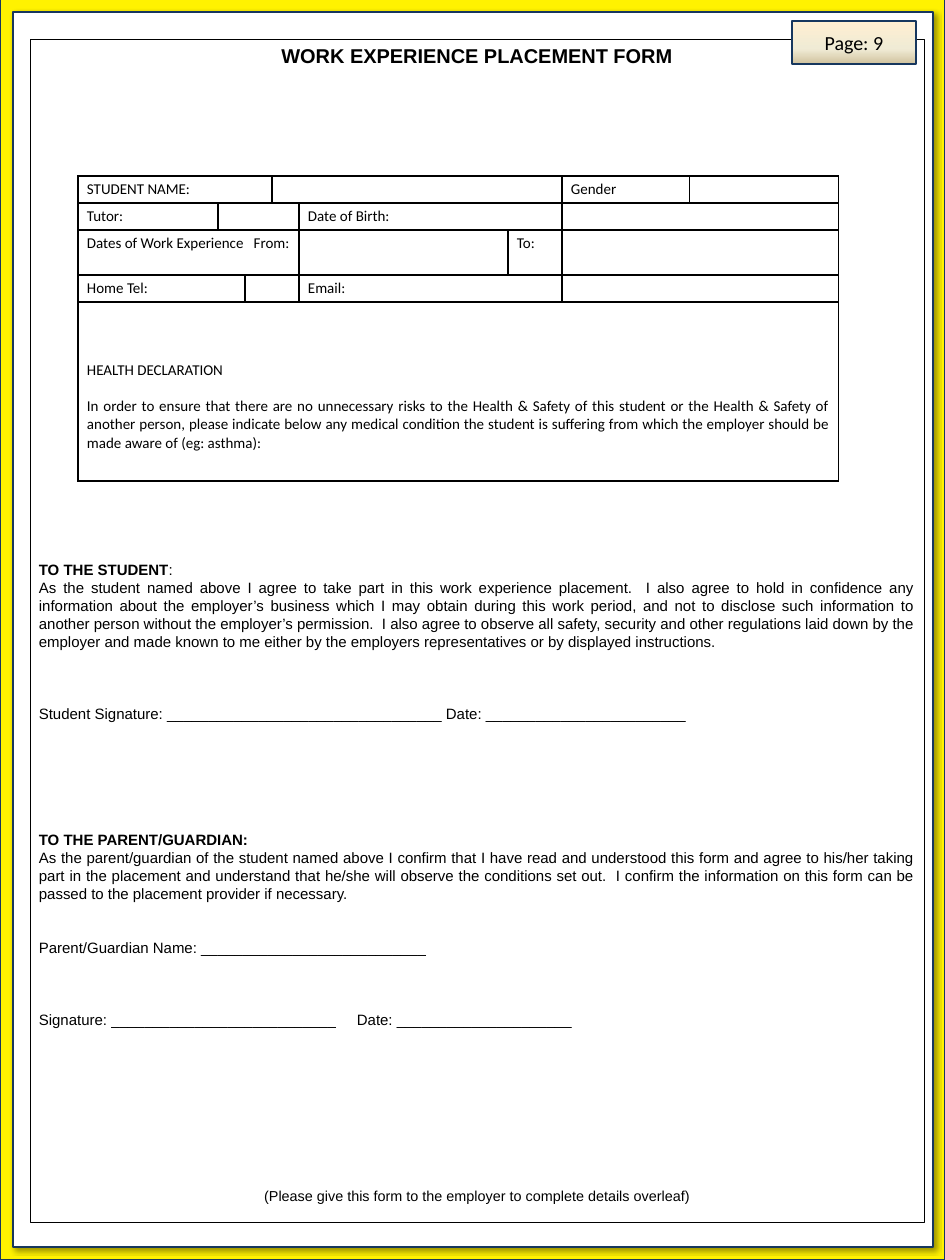
from lxml.etree import SubElement
from pptx import Presentation
from pptx.dml.color import RGBColor
from pptx.enum.shapes import MSO_SHAPE
from pptx.enum.text import MSO_ANCHOR, PP_ALIGN
from pptx.oxml.ns import qn
from pptx.util import Pt

PX = 12700 * 72 // 90
NAVY, BLACK, WHITE, YELLOW = "17375E", "000000", "FFFFFF", "FFF200"
BADGE_STOPS = [(0, "FFEFD1"), (65, "F0EBD5"), (100, "D1C39F")]
LEFT, CENTER, JUSTIFY = PP_ALIGN.LEFT, PP_ALIGN.CENTER, PP_ALIGN.JUSTIFY

COLUMNS = [140, 27, 27, 27, 209, 54, 128, 149]
ROWS = [27, 27, 45, 27, 179]
# Each row lists its cells as (text, columns spanned)
FORM = [
    [("STUDENT NAME:", 3), ("", 3), ("Gender", 1), ("", 1)],
    [("Tutor:", 1), ("", 3), ("Date of Birth:", 2), ("", 2)],
    [("Dates of Work Experience   From:", 4), ("", 1), ("To:", 1), ("", 2)],
    [("Home Tel:", 2), ("", 2), ("Email:", 2), ("", 2)],
    [("", 8)],
]
HEALTH_TITLE = "HEALTH DECLARATION"
HEALTH_TEXT = (
    "In order to ensure that there are no unnecessary risks to the Health & Safety "
    "of this student or the Health & Safety of another person, please indicate below "
    "any medical condition the student is suffering from which the employer should be "
    "made aware of (eg: asthma):"
)
STUDENT_TEXT = (
    "As the student named above I agree to take part in this work experience placement.  "
    "I also agree to hold in confidence any information about the employer’s business "
    "which I may obtain during this work period, and not to disclose such information to "
    "another person without the employer’s permission.  I also agree to observe all safety, "
    "security and other regulations laid down by the employer and made known to me either by "
    "the employers representatives or by displayed instructions."
)
PARENT_TEXT = (
    "As the parent/guardian of the student named above I confirm that I have read and "
    "understood this form and agree to his/her taking part in the placement and understand "
    "that he/she will observe the conditions set out.  I confirm the information on this "
    "form can be passed to the placement provider if necessary."
)
# Gap above in px, alignment, size in points, runs as (text, bold)
LETTER = [
    (0, CENTER, 16, [("WORK EXPERIENCE PLACEMENT FORM", True)]),
    (493, JUSTIFY, 12, [("TO THE STUDENT", True), (":", False)]),
    (0, JUSTIFY, 12, [(STUDENT_TEXT, False)]),
    (54, LEFT, 12, [("Student Signature: " + "_" * 33 + " Date: " + "_" * 24, False)]),
    (108, JUSTIFY, 12, [("TO THE PARENT/GUARDIAN:", True)]),
    (0, JUSTIFY, 12, [(PARENT_TEXT, False)]),
    (36, LEFT, 12, [("Parent/Guardian Name: " + "_" * 27, False)]),
    (54, LEFT, 12, [("Signature: " + "_" * 27 + "\tDate: " + "_" * 21, False)]),
    (159, CENTER, 11.5,
     [("(Please give this form to the employer to complete details overleaf)", False)]),
]
DATE_TAB = 318


def px(n):
    return n * PX


def rgb(color):
    return RGBColor.from_string(color)


def style_run(r, font, size, bold=False):
    r.font.name, r.font.size, r.font.bold = font, Pt(size), bold
    r.font.color.rgb = rgb(BLACK)


def add_box(slide, x, y, w, h, line, width, fill=None):
    s = slide.shapes.add_shape(MSO_SHAPE.RECTANGLE, px(x), px(y), px(w), px(h))
    s.shadow.inherit = False
    s.line.color.rgb = rgb(line)
    s.line.width = Pt(width)
    if fill:
        s.fill.solid()
        s.fill.fore_color.rgb = rgb(fill)
    else:
        s.fill.background()
    return s


def add_shadow(s):
    effects = s._element.spPr.find(qn("a:effectLst"))
    shadow = SubElement(effects, qn("a:outerShdw"), blurRad=str(Pt(4)), dist=str(Pt(3)),
                        dir="2700000", algn="tl", rotWithShape="0")
    color = SubElement(shadow, qn("a:srgbClr"), val=BLACK)
    SubElement(color, qn("a:alpha"), val="40000")


def set_gradient(s, stops):
    """Fill the shape from top to bottom with (percent, colour) stops."""
    s.fill.gradient()
    s.fill.gradient_angle = 270
    stop_list = s._element.spPr.find(".//" + qn("a:gsLst"))
    for old in list(stop_list):
        stop_list.remove(old)
    for percent, color in stops:
        stop = SubElement(stop_list, qn("a:gs"), pos=str(percent * 1000))
        SubElement(stop, qn("a:srgbClr"), val=color)


def set_borders(cell):
    tc_pr = cell._tc.get_or_add_tcPr()
    for side in ("lnL", "lnR", "lnT", "lnB"):
        ln = SubElement(tc_pr, qn("a:" + side), w=str(Pt(1)))
        SubElement(SubElement(ln, qn("a:solidFill")), qn("a:srgbClr"), val=BLACK)


def fill_cell(cell, text):
    cell.text_frame.text = text
    p = cell.text_frame.paragraphs[0]
    p.font.size = Pt(12)
    for r in p.runs:
        style_run(r, "Calibri", 12)


def add_health_declaration(cell):
    cell.margin_top = px(59)
    fill_cell(cell, HEALTH_TITLE)
    p = cell.text_frame.add_paragraph()
    p.text = HEALTH_TEXT
    p.alignment = JUSTIFY
    p.space_before = px(18)
    style_run(p.runs[0], "Calibri", 12)


def add_student_table(slide):
    table = slide.shapes.add_table(len(ROWS), len(COLUMNS), px(78), px(176),
                                   px(sum(COLUMNS)), px(sum(ROWS))).table
    table.first_row = table.horz_banding = False
    for column, width in zip(table.columns, COLUMNS):
        column.width = px(width)
    for row, height in zip(table.rows, ROWS):
        row.height = px(height)
    for cell in table.iter_cells():
        set_borders(cell)
        cell.fill.background()
        cell.margin_top = cell.margin_bottom = px(4)
        fill_cell(cell, "")
    for i, row in enumerate(FORM):
        j = 0
        for text, span in row:
            cell = table.cell(i, j)
            if span > 1:
                cell.merge(table.cell(i, j + span - 1))
            fill_cell(cell, text)
            j += span
    add_health_declaration(table.cell(len(ROWS) - 1, 0))


def add_tab_stop(p, position):
    tabs = SubElement(p._p.get_or_add_pPr(), qn("a:tabLst"))
    SubElement(tabs, qn("a:tab"), pos=str(px(position)), algn="l")


def add_letter(slide):
    tf = add_box(slide, 30, 39, 894, 1183, BLACK, 0.75).text_frame
    tf.word_wrap = True
    tf.vertical_anchor = MSO_ANCHOR.TOP
    for i, (gap, align, size, runs) in enumerate(LETTER):
        p = tf.add_paragraph() if i else tf.paragraphs[0]
        p.alignment = align
        p.line_spacing = Pt(size * 1.2)
        p.space_before = px(gap)
        for text, bold in runs:
            r = p.add_run()
            r.text = text
            style_run(r, "Arial", size, bold)
            if "\t" in text:
                add_tab_stop(p, DATE_TAB)


def add_page_badge(slide):
    s = add_box(slide, 792, 21, 124, 43, NAVY, 1.5)
    set_gradient(s, BADGE_STOPS)
    tf = s.text_frame
    tf.text = "Page: 9"
    tf.vertical_anchor = MSO_ANCHOR.MIDDLE
    p = tf.paragraphs[0]
    p.alignment = CENTER
    style_run(p.runs[0], "Calibri", 16)


def main():
    prs = Presentation()
    prs.slide_width, prs.slide_height = px(945), px(1260)
    slide = prs.slides.add_slide(prs.slide_layouts[6])
    add_box(slide, 0, -1, 945, 1261, NAVY, 2.25, YELLOW)
    add_shadow(add_box(slide, 13, 12, 920, 1235, NAVY, 2.25, WHITE))
    add_student_table(slide)
    add_letter(slide)
    add_page_badge(slide)
    prs.save("out.pptx")


if __name__ == "__main__":
    main()
